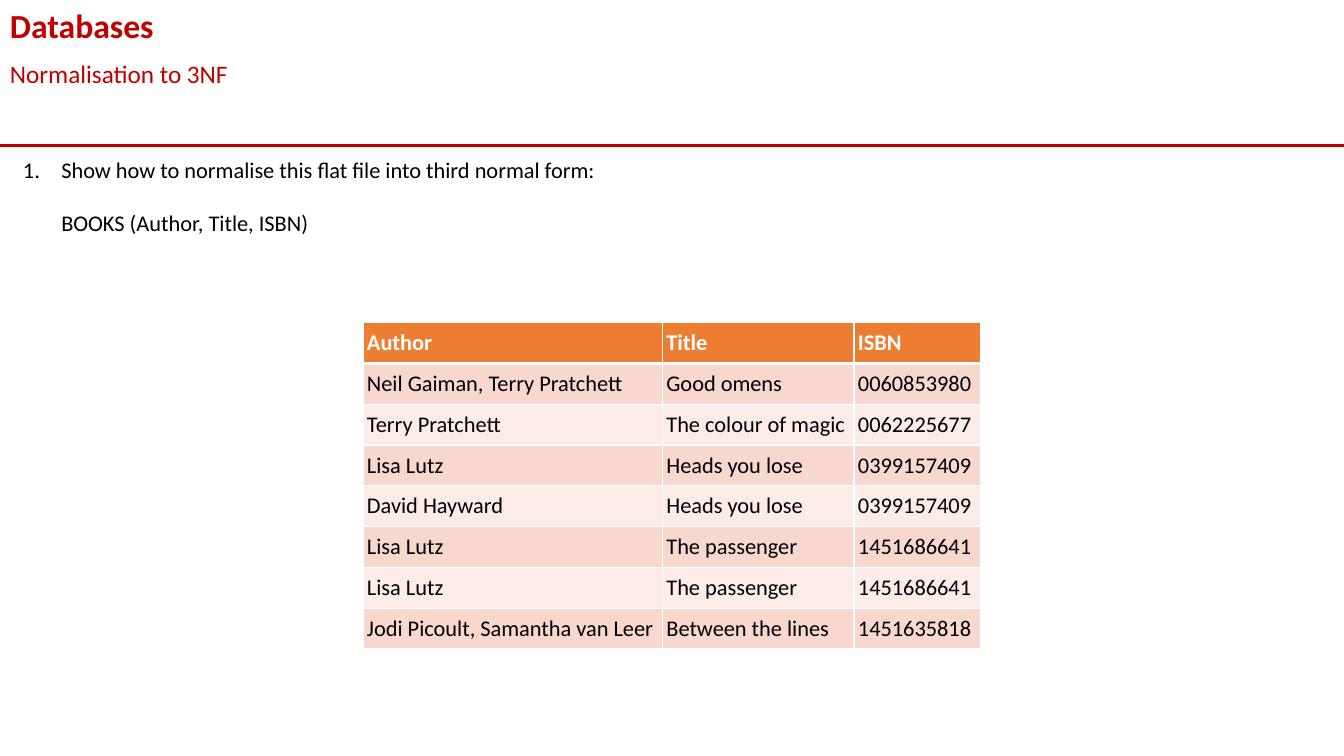
from lxml import etree
from pptx import Presentation
from pptx.dml.color import RGBColor
from pptx.enum import shapes, text
from pptx.oxml import ns
from pptx.util import Inches, Pt

RED = RGBColor(0xC0, 0x00, 0x00)
BLACK = RGBColor(0x00, 0x00, 0x00)
WHITE = RGBColor(0xFF, 0xFF, 0xFF)
ORANGE = RGBColor(0xED, 0x7D, 0x31)
PEACH = RGBColor(0xF8, 0xD7, 0xCE)
PALE_PEACH = RGBColor(0xFC, 0xEC, 0xE8)

SLIDE_WIDTH = 13.33
COLUMN_WIDTHS = [2.97, 1.9, 1.26]
BOOKS = [
    ("Author", "Title", "ISBN"),
    ("Neil Gaiman, Terry Pratchett", "Good omens", "0060853980"),
    ("Terry Pratchett", "The colour of magic", "0062225677"),
    ("Lisa Lutz", "Heads you lose", "0399157409"),
    ("David Hayward", "Heads you lose", "0399157409"),
    ("Lisa Lutz", "The passenger", "1451686641"),
    ("Lisa Lutz", "The passenger", "1451686641"),
    ("Jodi Picoult, Samantha van Leer", "Between the lines", "1451635818"),
]


def write(paragraph, words, size=16, color=BLACK, bold=False):
    run = paragraph.add_run()
    run.text = words
    run.font.name = "Calibri"
    run.font.size = Pt(size)
    run.font.bold = bold
    run.font.color.rgb = color


def add_text_box(slide, left, top, width, height):
    box = slide.shapes.add_textbox(Inches(left), Inches(top), Inches(width), Inches(height))
    box.text_frame.word_wrap = True
    return box.text_frame


def add_rule(slide, y):
    rule = slide.shapes.add_connector(
        shapes.MSO_CONNECTOR.STRAIGHT, 0, Inches(y), Inches(SLIDE_WIDTH), Inches(y))
    rule.line.color.rgb = RED
    rule.line.width = Pt(2.25)
    etree.SubElement(rule._element.spPr, ns.qn("a:effectLst"))


def indent(paragraph, first_line=0.0):
    properties = paragraph._p.get_or_add_pPr()
    properties.set("marL", str(Inches(0.38)))
    properties.set("indent", str(Inches(first_line)))
    return properties


def add_question(slide):
    frame = add_text_box(slide, 0.13, 1.5, 13.07, 0.91)
    question = frame.paragraphs[0]
    numbering = etree.SubElement(indent(question, -0.38), ns.qn("a:buAutoNum"))
    numbering.set("type", "arabicPeriod")
    write(question, "Show how to normalise this flat file into third normal form:")

    schema = frame.add_paragraph()
    indent(schema)
    schema.space_before = Pt(19)
    write(schema, "BOOKS (Author, Title, ISBN)")


def set_borders(cell, top=1, bottom=1):
    properties = cell._tc.get_or_add_tcPr()
    for side, width in (("L", 1), ("R", 1), ("T", top), ("B", bottom)):
        border = etree.SubElement(properties, ns.qn(f"a:ln{side}"), w=str(Pt(width)))
        fill = etree.SubElement(border, ns.qn("a:solidFill"))
        etree.SubElement(fill, ns.qn("a:srgbClr"), val=str(WHITE))


def add_books_table(slide):
    table = slide.shapes.add_table(
        len(BOOKS), len(COLUMN_WIDTHS), Inches(3.6), Inches(3.2),
        Inches(sum(COLUMN_WIDTHS)), Inches(3.24)).table
    for column, width in zip(table.columns, COLUMN_WIDTHS):
        column.width = Inches(width)

    for row, book in enumerate(BOOKS):
        header = row == 0
        band = PEACH if row % 2 else PALE_PEACH
        for column, words in enumerate(book):
            cell = table.cell(row, column)
            cell.margin_left = cell.margin_right = Inches(0.04)
            cell.margin_top = cell.margin_bottom = Inches(0.04)
            cell.vertical_anchor = text.MSO_ANCHOR.MIDDLE
            # A thick line separates the header from the first book
            set_borders(cell, top=3 if row == 1 else 1, bottom=3 if header else 1)
            cell.fill.solid()
            cell.fill.fore_color.rgb = ORANGE if header else band
            write(cell.text_frame.paragraphs[0], words,
                  color=WHITE if header else BLACK, bold=header)


def main():
    presentation = Presentation()
    presentation.slide_width = Inches(SLIDE_WIDTH)
    presentation.slide_height = Inches(7.5)
    slide = presentation.slides.add_slide(presentation.slide_layouts[6])

    # Heading
    add_rule(slide, 1.44)
    subtitle = add_text_box(slide, 0, 0.53, SLIDE_WIDTH, 0.4)
    write(subtitle.paragraphs[0], "Normalisation to 3NF", size=18, color=RED)
    title = add_text_box(slide, 0, 0, SLIDE_WIDTH, 0.5)
    write(title.paragraphs[0], "Databases", size=24, color=RED, bold=True)

    # Exercise
    add_question(slide)
    add_books_table(slide)

    presentation.save("out.pptx")


if __name__ == "__main__":
    main()
